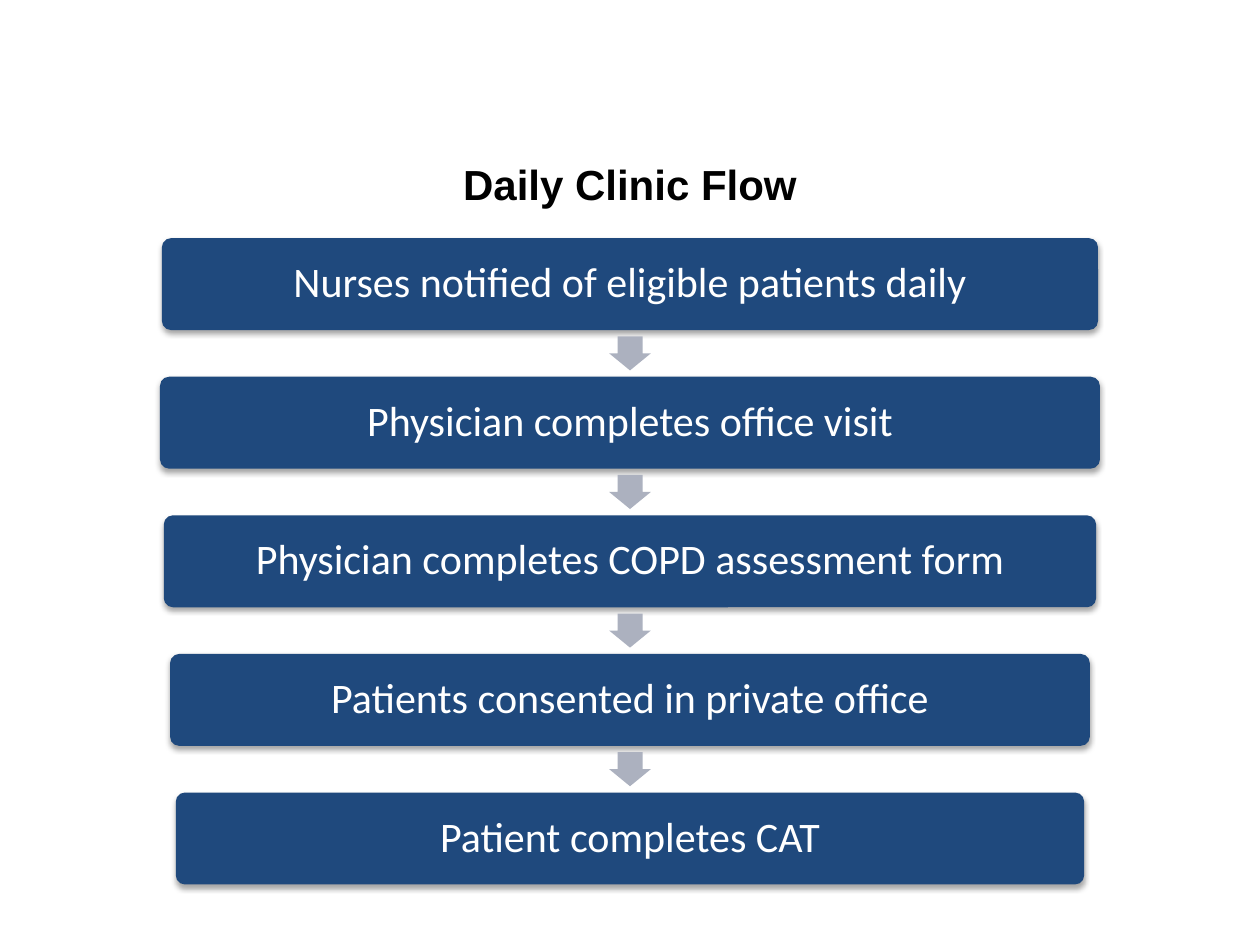
"""Build the daily clinic flow slide: a title above five steps joined by arrows."""
from dataclasses import dataclass

from lxml.etree import SubElement
from pptx import Presentation
from pptx.dml.color import RGBColor
from pptx.enum.shapes import MSO_SHAPE as Shape
from pptx.enum.text import MSO_ANCHOR as Anchor, PP_ALIGN as Align
from pptx.oxml.ns import qn
from pptx.shapes.autoshape import Shape as AutoShape
from pptx.shapes.group import GroupShape
from pptx.text.text import TextFrame
from pptx.util import Inches, Pt

NAVY = RGBColor(0x1F, 0x49, 0x7D)
GREY = RGBColor(0xAC, 0xB1, 0xBF)
WHITE = RGBColor(0xFF, 0xFF, 0xFF)
BLACK = RGBColor(0, 0, 0)

CENTER = 5.0
FIRST_TOP = 1.89
BOX_HEIGHT = 0.73
PITCH = 1.1
ARROW_LENGTH, ARROW_WIDTH = 0.27, 0.33


@dataclass
class Step:
    text: str
    width: float


STEPS = [
    Step("Nurses notified of eligible patients daily", 7.43),
    Step("Physician completes office visit", 7.46),
    Step("Physician completes COPD assessment form", 7.4),
    Step("Patients consented in private office", 7.3),
    Step("Patient completes CAT", 7.21),
]


def write(tf: TextFrame, text: str, font: str, color: RGBColor, bold: bool) -> None:
    tf.word_wrap = True
    tf.vertical_anchor = Anchor.MIDDLE
    p = tf.paragraphs[0]
    p.alignment = Align.CENTER
    r = p.add_run()
    r.text = text
    r.font.name = font
    r.font.size = Pt(24)
    r.font.bold = bold
    r.font.color.rgb = color


def add_shape(group: GroupShape, kind: Shape, middle: float, width: float,
              height: float, fill: RGBColor) -> AutoShape:
    sp = group.shapes.add_shape(kind, Inches(CENTER - width / 2), Inches(middle - height / 2),
                                Inches(width), Inches(height))
    sp.fill.solid()
    sp.fill.fore_color.rgb = fill
    sp.line.fill.background()
    sp.shadow.inherit = False
    return sp


def add_shadow(sp: AutoShape) -> None:
    effects = sp._element.spPr.find(qn("a:effectLst"))
    shadow = SubElement(effects, qn("a:outerShdw"), blurRad=str(Pt(3.1)),
                        dist=str(Pt(1.8)), dir="5400000", rotWithShape="0")
    color = SubElement(shadow, qn("a:srgbClr"), val=str(BLACK))
    SubElement(color, qn("a:alpha"), val="35000")


def add_step(group: GroupShape, step: Step, middle: float) -> None:
    sp = add_shape(group, Shape.ROUNDED_RECTANGLE, middle, step.width, BOX_HEIGHT, NAVY)
    sp.adjustments[0] = 0.1
    add_shadow(sp)
    write(sp.text_frame, step.text, "Calibri", WHITE, False)
    sp.text_frame.paragraphs[0].line_spacing = 0.9


def add_arrow(group: GroupShape, middle: float) -> None:
    sp = add_shape(group, Shape.RIGHT_ARROW, middle, ARROW_LENGTH, ARROW_WIDTH, GREY)
    sp.adjustments[0] = 0.6
    sp.adjustments[1] = 0.5
    sp.rotation = 90


def main() -> None:
    prs = Presentation()
    prs.slide_width, prs.slide_height = Inches(10), Inches(7.5)
    s = prs.slides.add_slide(prs.slide_layouts[5])
    title = s.shapes.title
    title.left, title.top = Inches(0.5), Inches(1.03)
    title.width, title.height = Inches(9), Inches(0.86)
    write(title.text_frame, "Daily Clinic Flow", "Arial", BLACK, True)

    group = s.shapes.add_group_shape()
    for i, step in enumerate(STEPS):
        middle = FIRST_TOP + BOX_HEIGHT / 2 + i * PITCH
        if i:
            add_arrow(group, middle - PITCH / 2)
        add_step(group, step, middle)
    prs.save("out.pptx")


if __name__ == "__main__":
    main()
